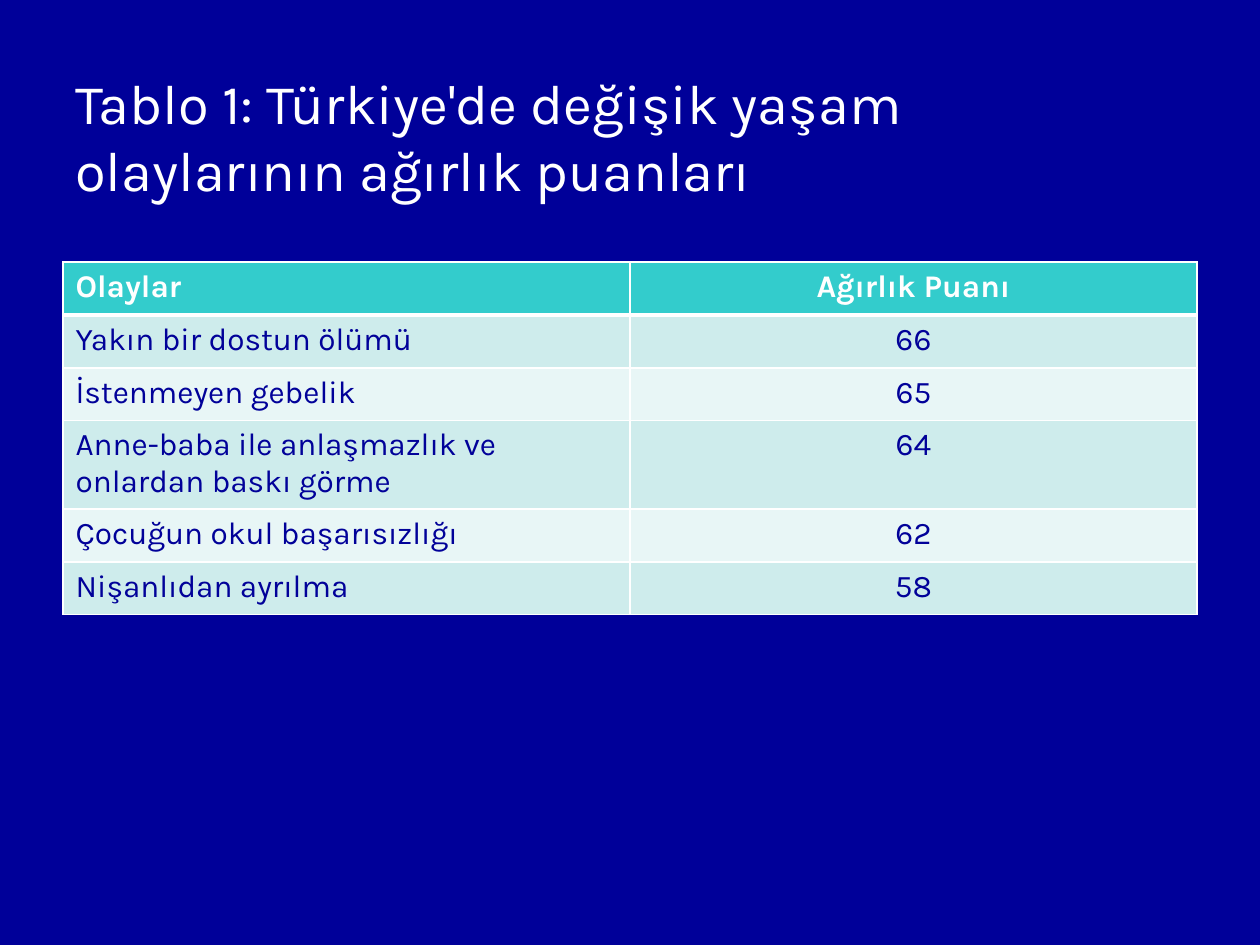
from lxml import etree
from pptx import Presentation
from pptx.dml.color import RGBColor
from pptx.enum import text
from pptx.oxml.ns import qn
from pptx.util import Inches, Pt

NAVY = RGBColor(0x00, 0x00, 0x99)
INK = RGBColor(0x01, 0x01, 0x99)
WHITE = RGBColor(0xFF, 0xFF, 0xFF)
TURQUOISE = RGBColor(0x33, 0xCC, 0xCC)
BANDS = (RGBColor(0xCE, 0xEC, 0xEC), RGBColor(0xE8, 0xF6, 0xF6))
FONT = "Karla"

TITLE = "Tablo 1: Türkiye'de değişik yaşam olaylarının ağırlık puanları"
HEADINGS = ("Olaylar", "Ağırlık Puanı")
EVENTS = (
    ("Yakın bir dostun ölümü", 66),
    ("İstenmeyen gebelik", 65),
    ("Anne-baba ile anlaşmazlık ve onlardan baskı görme", 64),
    ("Çocuğun okul başarısızlığı", 62),
    ("Nişanlıdan ayrılma", 58),
)
ROW_HEIGHT = 0.42


def style_paragraph(paragraph, size, color, bold=False):
    font = paragraph.font
    font.name, font.size, font.bold = FONT, Pt(size), bold
    font.color.rgb = color


def add_title(slide):
    box = slide.shapes.add_textbox(Inches(0.5), Inches(0.32), Inches(9), Inches(1.51))
    frame = box.text_frame
    frame.word_wrap = True
    frame.vertical_anchor = text.MSO_ANCHOR.MIDDLE
    frame.text = TITLE
    style_paragraph(frame.paragraphs[0], 32, WHITE)


def set_borders(cell, top=1, bottom=1):
    """Draw white cell edges; widths are in points."""
    properties = cell._tc.get_or_add_tcPr()
    edges = (("a:lnL", 1), ("a:lnR", 1), ("a:lnT", top), ("a:lnB", bottom))
    for position, (tag, width) in enumerate(edges):
        line = etree.Element(qn(tag), w=str(Pt(width)))
        fill = etree.SubElement(line, qn("a:solidFill"))
        etree.SubElement(fill, qn("a:srgbClr"), val=str(WHITE))
        properties.insert(position, line)


def fill_cell(cell, value, row, column):
    header = row == 0
    cell.text = str(value)
    paragraph = cell.text_frame.paragraphs[0]
    if column == 1:
        paragraph.alignment = text.PP_ALIGN.CENTER
    style_paragraph(paragraph, 18, WHITE if header else INK, bold=header)
    cell.fill.solid()
    cell.fill.fore_color.rgb = TURQUOISE if header else BANDS[(row - 1) % 2]
    set_borders(cell, top=3 if row == 1 else 1, bottom=3 if header else 1)


def add_score_table(slide):
    rows = (HEADINGS, *EVENTS)
    table = slide.shapes.add_table(
        len(rows), len(HEADINGS), Inches(0.5), Inches(2.08),
        Inches(9), Inches(ROW_HEIGHT * len(rows))).table
    for row, values in enumerate(rows):
        for column, value in enumerate(values):
            fill_cell(table.cell(row, column), value, row, column)


def main():
    deck = Presentation()
    deck.slide_width, deck.slide_height = Inches(10), Inches(7.5)
    slide = deck.slides.add_slide(deck.slide_layouts[6])
    slide.background.fill.solid()
    slide.background.fill.fore_color.rgb = NAVY
    add_title(slide)
    add_score_table(slide)
    deck.save("out.pptx")


if __name__ == "__main__":
    main()
